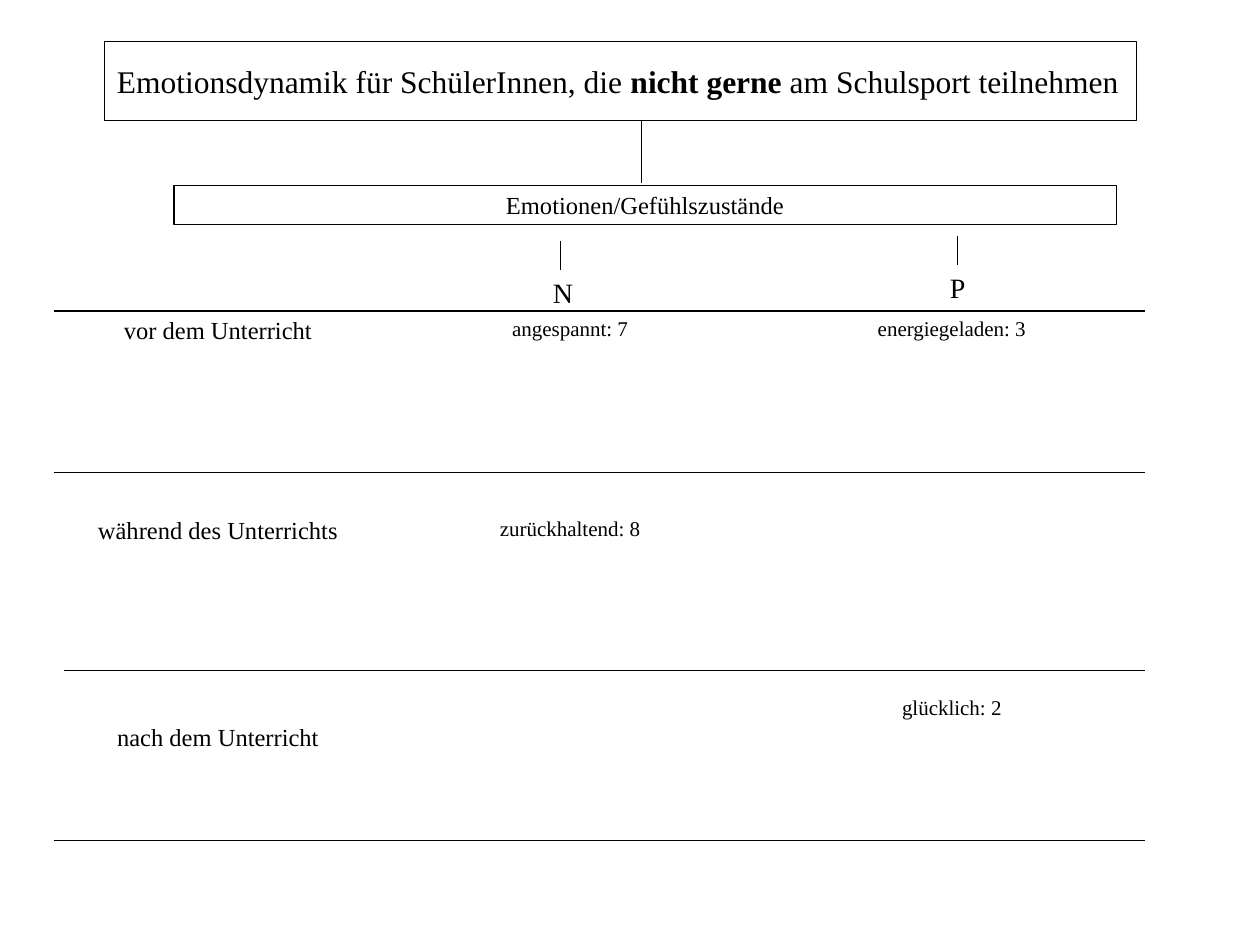
import pptx
import pptx.util
import pptx.dml.color
import pptx.enum.shapes
import pptx.enum.text
import pptx.oxml
import pptx.oxml.ns

WIDTH = pptx.util.Inches(10)
HEIGHT = pptx.util.Inches(7.5)
GRID_COLUMNS, GRID_ROWS = 100, 75
FONT = "Times New Roman"
INK = "000000"
PLAIN_TABLE_STYLE = "{2D5ABB26-0587-4C30-8999-92F81FD0307C}"
LEFT = pptx.enum.text.PP_ALIGN.LEFT
CENTER = pptx.enum.text.PP_ALIGN.CENTER


def columns(count):
    return round(WIDTH * count / GRID_COLUMNS)


def rows(count):
    return round(HEIGHT * count / GRID_ROWS)


def color(value):
    return pptx.dml.color.RGBColor.from_string(value)


def area(left, top, width, height):
    return columns(left), rows(top), columns(width), rows(height)


def write(frame, spans, size, align=LEFT):
    para = frame.paragraphs[0]
    para.alignment = align
    for text, bold in spans:
        span = para.add_run()
        span.text = text
        span.font.name = FONT
        span.font.size = pptx.util.Pt(size)
        span.font.bold = bold
        span.font.color.rgb = color(INK)


def style_line(line):
    line.color.rgb = color(INK)
    line.width = pptx.util.Pt(0.75)


def add_line(page, x1, y1, x2, y2):
    line = page.shapes.add_connector(
        pptx.enum.shapes.MSO_CONNECTOR.STRAIGHT,
        columns(x1), rows(y1), columns(x2), rows(y2))
    style_line(line.line)
    line._element.spPr.append(pptx.oxml.parse_xml(
        f"<a:effectLst {pptx.oxml.ns.nsdecls('a')}/>"))


def add_frame(page, place, spans, size, align):
    box = page.shapes.add_shape(
        pptx.enum.shapes.MSO_SHAPE.RECTANGLE, *area(*place))
    box.shadow.inherit = False
    box.fill.background()
    style_line(box.line)
    box.text_frame.vertical_anchor = pptx.enum.text.MSO_ANCHOR.MIDDLE
    box.text_frame.word_wrap = True
    write(box.text_frame, spans, size, align)


def add_label(page, place, text):
    box = page.shapes.add_textbox(*area(*place))
    box.text_frame.word_wrap = True
    write(box.text_frame, [(text, False)], 16)


def add_border(cell, side):
    border = pptx.oxml.parse_xml(
        f'<a:{side} {pptx.oxml.ns.nsdecls("a")} w="12700"><a:solidFill>'
        f'<a:srgbClr val="{INK}"/></a:solidFill></a:{side}>')
    cell._tc.get_or_add_tcPr().insert(0, border)


def add_phase_table(page, place, widths, heights, content):
    table = page.shapes.add_table(
        len(heights), len(widths), *area(*place)).table
    table.first_row = table.horz_banding = False
    table._tbl.tblPr.find(
        pptx.oxml.ns.qn("a:tableStyleId")).text = PLAIN_TABLE_STYLE
    for column, width in zip(table.columns, widths):
        column.width = columns(width)
    for row, height in zip(table.rows, heights):
        row.height = rows(height)
    for row, texts in zip(table.rows, content):
        for index, (cell, text) in enumerate(zip(row.cells, texts)):
            cell.fill.background()
            if text:
                size = 12 if index else 14
                write(cell.text_frame, [(text, False)], size, CENTER)
    for cell in table.rows[0].cells:
        add_border(cell, "lnT")
    for cell in table.rows[len(heights) - 1].cells:
        add_border(cell, "lnB")
    table.cell(len(heights) - 1, 0).margin_top = rows(2.74)


def main():
    deck = pptx.Presentation()
    deck.slide_width, deck.slide_height = WIDTH, HEIGHT
    page = deck.slides.add_slide(deck.slide_layouts[6])

    add_line(page, 50.9, 9.5, 50.9, 14.5)
    add_frame(page, (8.3, 3.3, 81.9, 6.3), [
        ("Emotionsdynamik für SchülerInnen, die ", False),
        ("nicht gerne ", True),
        ("am Schulsport teilnehmen", False)], 18, LEFT)
    add_frame(page, (13.8, 14.7, 74.8, 3.1),
              [("Emotionen/Gefühlszustände", False)], 14, CENTER)

    add_phase_table(
        page, (4.3, 24.7, 86.6, 42), (26, 29.9, 30.7), (15.9, 14.2, 11.9), [
            ("vor dem Unterricht", "angespannt: 7", "energiegeladen: 3"),
            ("während des Unterrichts", "zurückhaltend: 8", ""),
            ("nach dem Unterricht", "", "glücklich: 2")])
    for left, top in ((4.3, 37.5), (5.1, 53.2)):
        add_line(page, left, top, 90.9, top)

    for text, left, top, width in (("N", 42.9, 21.4, 4.7),
                                   ("P", 74.4, 21, 6.3)):
        add_label(page, (left, top, width, 3.7), text)
        add_line(page, left + 1.6, top - 2.3, left + 1.6, top)

    deck.save("out.pptx")


if __name__ == "__main__":
    main()
